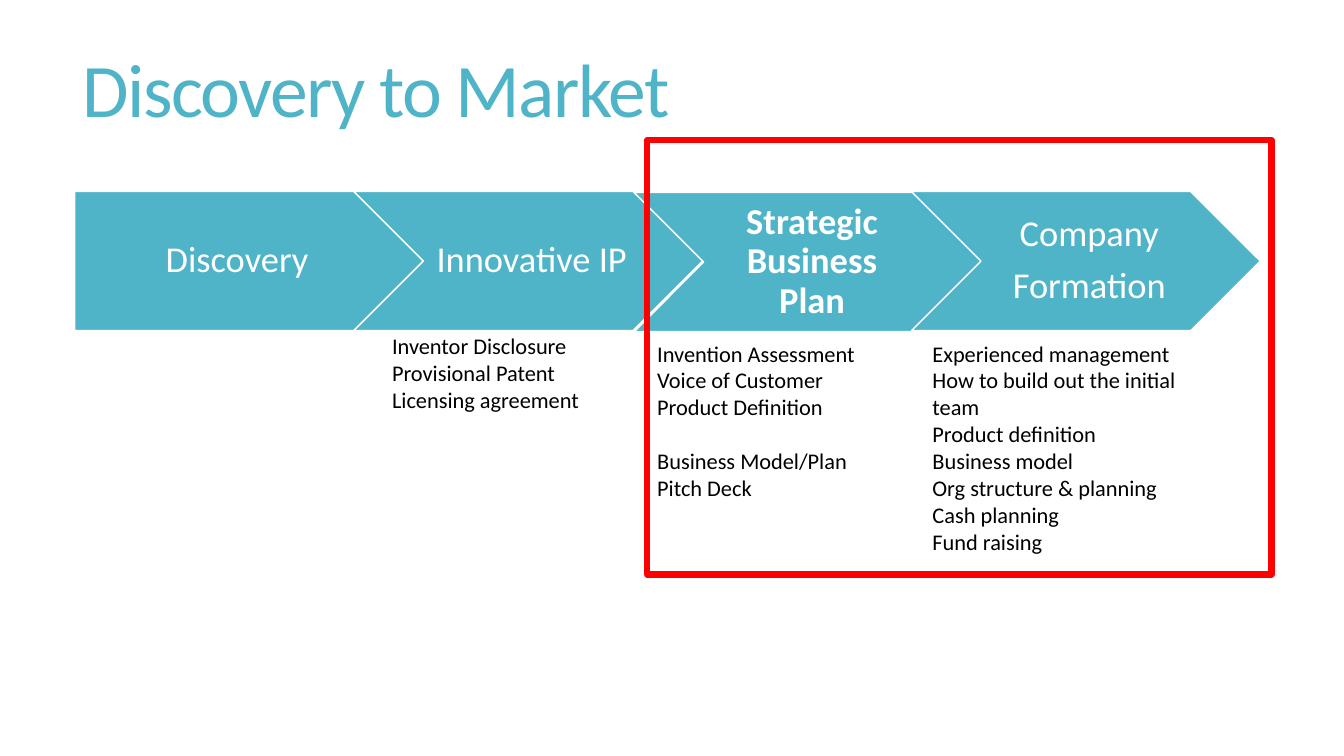
import pptx
import pptx.util
import pptx.dml.color
import pptx.enum.shapes
import pptx.enum.text
import pptx.oxml.ns
import lxml.etree

Inches, Pt = pptx.util.Inches, pptx.util.Pt
RGB = pptx.dml.color.RGBColor
SHAPE = pptx.enum.shapes.MSO_SHAPE
ALIGN = pptx.enum.text.PP_ALIGN
ANCHOR = pptx.enum.text.MSO_ANCHOR
AUTO_SIZE = pptx.enum.text.MSO_AUTO_SIZE

THEME = {
    "font": "Calibri",
    "teal": RGB.from_string("50B4C8"),
    "white": RGB.from_string("FFFFFF"),
    "black": RGB.from_string("000000"),
    "red": RGB.from_string("FF0000"),
    "title": Pt(54),
    "stage": Pt(26),
    "detail": Pt(16),
}


def format_text(frame, size, color, bold=False):
    for paragraph in frame.paragraphs:
        for run in paragraph.runs:
            run.font.name = THEME["font"]
            run.font.size = THEME[size]
            run.font.color.rgb = THEME[color]
            run.font.bold = bold


presentation = pptx.Presentation()
presentation.slide_width = Inches(13.33)
presentation.slide_height = Inches(7.5)
slide = presentation.slides.add_slide(presentation.slide_layouts[5])

title = slide.shapes.title
title.left, title.top = Inches(0.72), Inches(0.33)
title.width, title.height = Inches(11.78), Inches(1.21)
title.text_frame.text = "Discovery to Market"
title.text_frame.vertical_anchor = ANCHOR.MIDDLE
title.text_frame.auto_size = AUTO_SIZE.NONE
heading = title.text_frame.paragraphs[0]
heading.alignment = ALIGN.LEFT
heading.line_spacing = 0.85
format_text(title.text_frame, "title", "teal")
heading.runs[0].font._element.set("spc", "-120")

stages = [
    ("Discovery", SHAPE.PENTAGON, 0.74, 1.9, 0.15, False),
    ("Innovative IP", SHAPE.CHEVRON, 3.51, 1.9, 0.11, False),
    ("Strategic Business Plan", SHAPE.CHEVRON, 6.29, 1.91, 0.11, True),
    ("Company\nFormation", SHAPE.CHEVRON, 9.04, 1.9, 0.11, False),
]
for label, outline, left, top, inset, bold in stages:
    stage = slide.shapes.add_shape(outline, Inches(left), Inches(top), Inches(3.46), Inches(1.38))
    stage.shadow.inherit = False
    stage.fill.solid()
    stage.fill.fore_color.rgb = THEME["teal"]
    stage.line.color.rgb = THEME["white"]
    stage.line.width = Pt(1)
    frame = stage.text_frame
    frame.text = label
    frame.word_wrap = True
    frame.vertical_anchor = ANCHOR.MIDDLE
    frame.margin_left, frame.margin_right = Inches(inset), Inches(0.04)
    frame.margin_top = frame.margin_bottom = Inches(0.08)
    for paragraph in frame.paragraphs:
        paragraph.alignment = ALIGN.CENTER
        paragraph.line_spacing = 0.9
        paragraph.space_after = Pt(9)
    format_text(frame, "stage", "white", bold)

focus_frame = slide.shapes.add_shape(
    SHAPE.RECTANGLE, Inches(6.42), Inches(1.39), Inches(6.19), Inches(4.31))
focus_frame.shadow.inherit = False
focus_frame.fill.background()
focus_frame.line.color.rgb = THEME["red"]
focus_frame.line.width = Pt(4.5)
lxml.etree.SubElement(focus_frame.line._get_or_add_ln(), pptx.oxml.ns.qn("a:round"))

details = [
    (3.79, 3.25, 2.14, 0.91,
     ["Inventor Disclosure", "Provisional Patent", "Licensing agreement"]),
    (6.42, 3.32, 2.16, 1.72,
     ["Invention Assessment", "Voice of Customer", "Product Definition",
      "Business Model/Plan", "Pitch Deck"]),
    (9.15, 3.32, 3.12, 1.99,
     ["Experienced management", "How to build out the initial team", "Product definition",
      "Business model", "Org structure & planning", "Cash planning", "Fund raising"]),
]
for left, top, width, height, steps in details:
    detail = slide.shapes.add_textbox(Inches(left), Inches(top), Inches(width), Inches(height))
    frame = detail.text_frame
    frame.text = "\n".join(steps)
    frame.word_wrap = False
    frame.auto_size = AUTO_SIZE.SHAPE_TO_FIT_TEXT
    format_text(frame, "detail", "black")
    for paragraph in frame.paragraphs:
        if paragraph.text == "Business Model/Plan":
            paragraph.space_before = Pt(19.5)

presentation.save("out.pptx")
